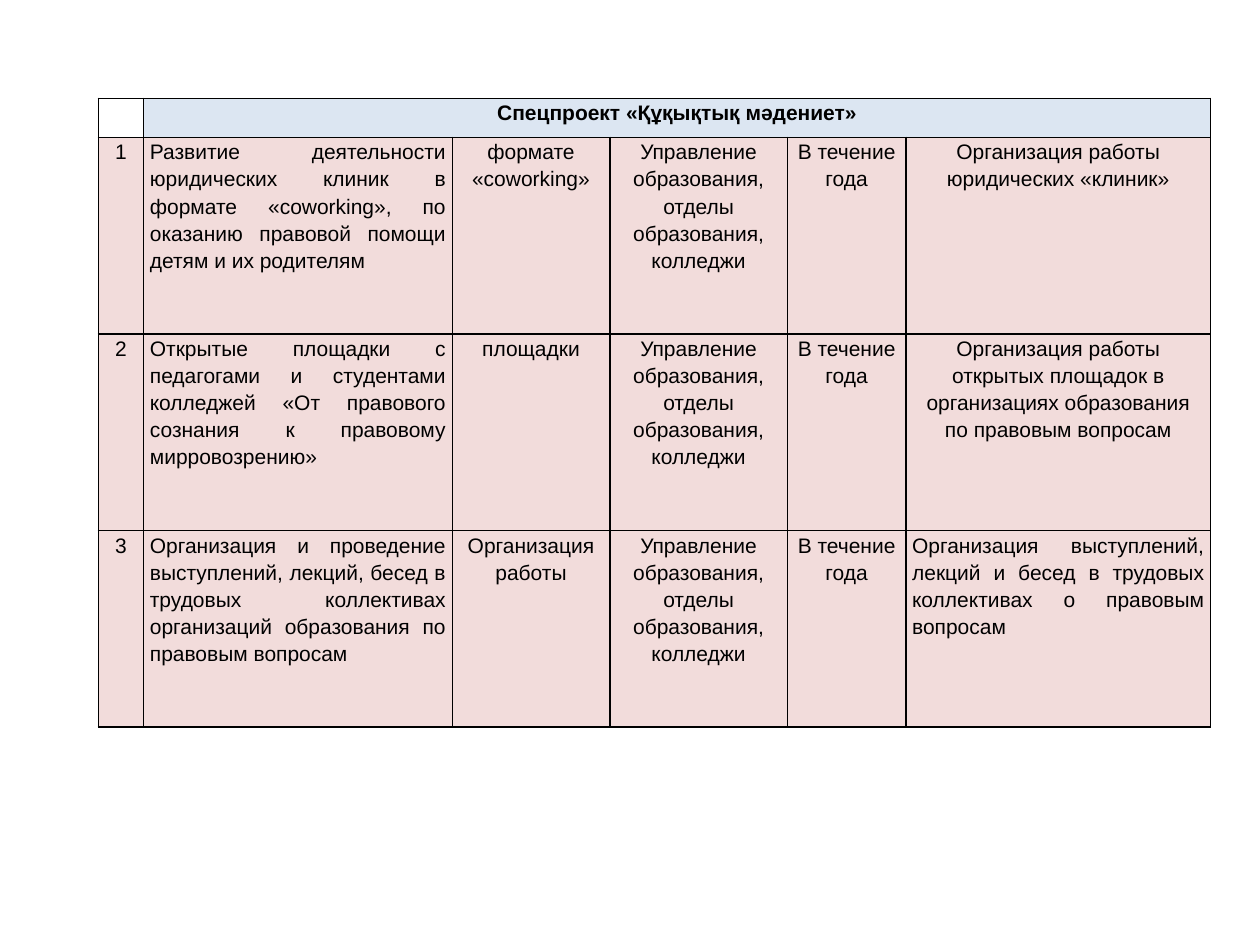
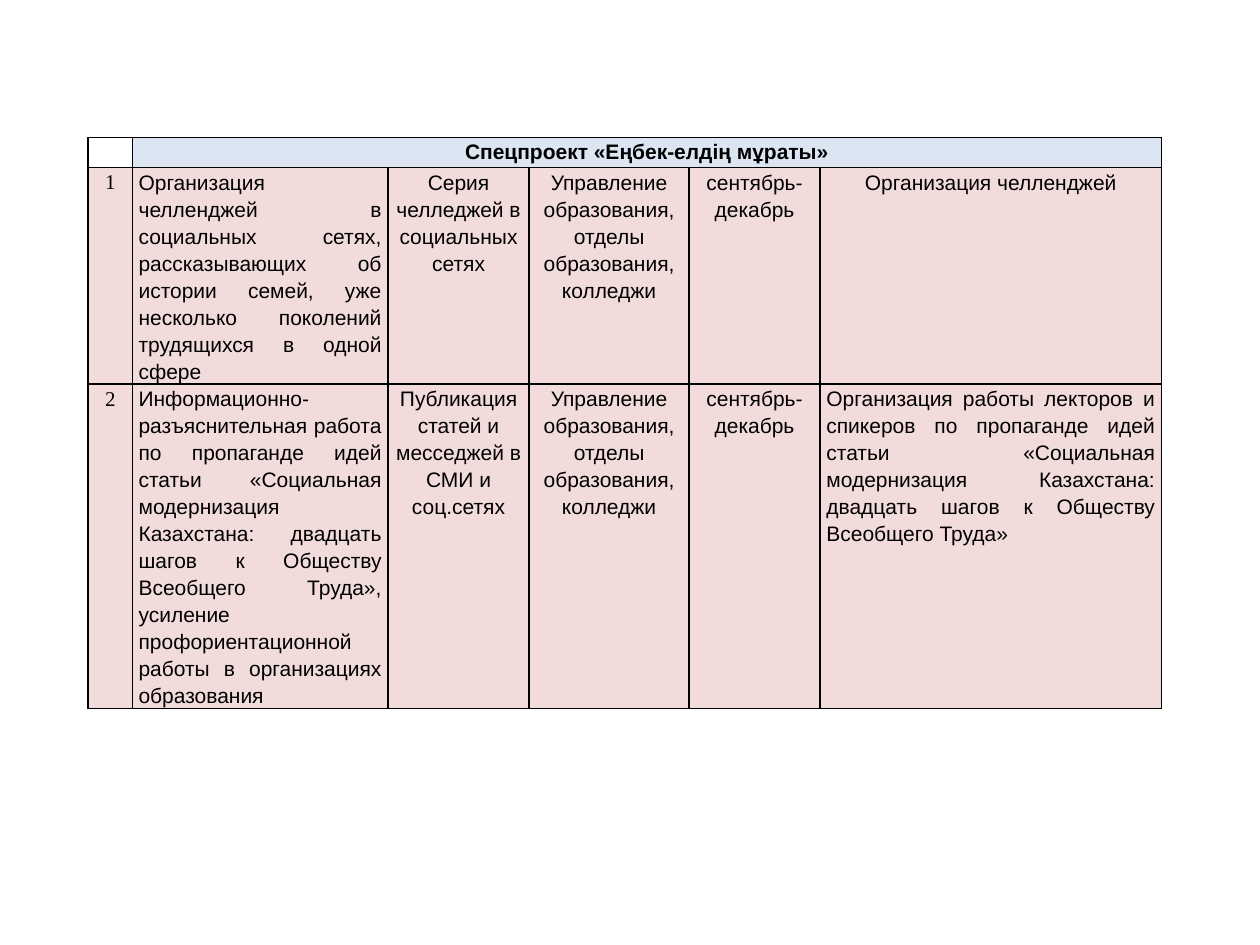
from lxml import etree
from pptx import Presentation
from pptx.dml.color import RGBColor
from pptx.enum.text import PP_ALIGN
from pptx.oxml.ns import qn
from pptx.util import Inches, Pt

BLACK = RGBColor(0x00, 0x00, 0x00)
HEADER_BLUE = RGBColor(0xDC, 0xE6, 0xF2)
ROW_PINK = RGBColor(0xF2, 0xDC, 0xDB)
CENTER, JUSTIFY = PP_ALIGN.CENTER, PP_ALIGN.JUSTIFY
FONT, NUMBER_FONT = "Arial", "Times New Roman"
SIZE = Pt(12)
BORDER = Pt(1)

EXECUTORS = "Управление образования, отделы образования, колледжи"
ALL_YEAR = "В течение года"
AUTUMN = "сентябрь-декабрь"

# Each row: activity, form, executors, term, result, alignment of the result
LEGAL_CULTURE = [
    ("Развитие деятельности юридических клиник в формате «coworking», "
     "по оказанию правовой помощи детям и их родителям",
     "формате «coworking»", EXECUTORS, ALL_YEAR,
     "Организация работы юридических «клиник»", CENTER),
    ("Открытые площадки с педагогами и студентами колледжей "
     "«От правового сознания к правовому мирровозрению»",
     "площадки", EXECUTORS, ALL_YEAR,
     "Организация работы открытых площадок в организациях образования "
     "по правовым вопросам", CENTER),
    ("Организация и проведение выступлений, лекций, бесед в трудовых "
     "коллективах организаций образования по правовым вопросам",
     "Организация работы", EXECUTORS, ALL_YEAR,
     "Организация выступлений, лекций и бесед в трудовых коллективах "
     "о правовым вопросам", JUSTIFY),
]
LABOUR = [
    ("Организация челленджей в социальных сетях, рассказывающих об истории "
     "семей, уже несколько поколений трудящихся в одной сфере",
     "Серия челледжей в социальных сетях", EXECUTORS, AUTUMN,
     "Организация челленджей", CENTER),
    ("Информационно-разъяснительная работа по пропаганде идей статьи "
     "«Социальная модернизация Казахстана: двадцать шагов к Обществу "
     "Всеобщего Труда», усиление профориентационной работы в организациях "
     "образования",
     "Публикация статей и месседжей в СМИ и соц.сетях", EXECUTORS, AUTUMN,
     "Организация работы лекторов и спикеров по пропаганде идей статьи "
     "«Социальная модернизация Казахстана: двадцать шагов к Обществу "
     "Всеобщего Труда»", JUSTIFY),
]


def style_cell(cell, fill=None):
    """Set margins, black borders and fill."""
    cell.margin_left = cell.margin_right = Inches(0.05)
    cell.margin_top = cell.margin_bottom = 0
    tcPr = cell._tc.get_or_add_tcPr()
    for side in ("a:lnL", "a:lnR", "a:lnT", "a:lnB"):
        ln = etree.SubElement(tcPr, qn(side), w=str(BORDER))
        solid = etree.SubElement(ln, qn("a:solidFill"))
        etree.SubElement(solid, qn("a:srgbClr"), val=str(BLACK))
    if fill is None:
        cell.fill.background()
    else:
        cell.fill.solid()
        cell.fill.fore_color.rgb = fill


def write_cell(cell, text, align=CENTER, font=FONT, bold=False):
    p = cell.text_frame.paragraphs[0]
    p.alignment = align
    p.line_spacing = 1.15
    r = p.add_run()
    r.text = text
    r.font.name = font
    r.font.size = SIZE
    r.font.bold = bold
    r.font.color.rgb = BLACK


def add_project_slide(prs, title, rows, box, col_widths, row_heights,
                      number_font=FONT):
    s = prs.slides.add_slide(prs.slide_layouts[6])
    frame = s.shapes.add_table(len(rows) + 1, len(col_widths),
                               *(Inches(v) for v in box))
    table = frame.table
    table.first_row = table.horz_banding = False
    for column, width in zip(table.columns, col_widths):
        column.width = Inches(width)
    for row, height in zip(table.rows, row_heights):
        row.height = Inches(height)

    corner, header = table.cell(0, 0), table.cell(0, 1)
    style_cell(corner)
    etree.SubElement(corner.text_frame.paragraphs[0]._p,
                     qn("a:endParaRPr"), sz=str(int(SIZE.pt * 100)))
    for col in range(1, len(col_widths)):
        style_cell(table.cell(0, col), HEADER_BLUE)
    header.merge(table.cell(0, len(col_widths) - 1))
    write_cell(header, title, bold=True)

    for number, (*texts, result_align) in enumerate(rows, 1):
        aligns = [JUSTIFY, CENTER, CENTER, CENTER, result_align]
        number_cell = table.cell(number, 0)
        style_cell(number_cell, ROW_PINK)
        write_cell(number_cell, str(number), font=number_font)
        for col, (text, align) in enumerate(zip(texts, aligns), 1):
            cell = table.cell(number, col)
            style_cell(cell, ROW_PINK)
            write_cell(cell, text, align)


def main():
    prs = Presentation()
    prs.slide_width, prs.slide_height = Inches(10), Inches(7.5)
    add_project_slide(prs, "Спецпроект «Құқықтық мәдениет»", LEGAL_CULTURE,
                      (0.78, 0.78, 8.83, 5),
                      (0.36, 2.45, 1.25, 1.41, 0.94, 2.42),
                      (0.31, 1.56, 1.56, 1.56))
    add_project_slide(prs, "Спецпроект «Еңбек-елдің мұраты»", LABOUR,
                      (0.7, 1.09, 8.52, 4.84),
                      (0.35, 2.03, 1.12, 1.27, 1.04, 2.71),
                      (0.24, 1.46, 2.18), NUMBER_FONT)
    prs.save("out.pptx")


if __name__ == "__main__":
    main()
